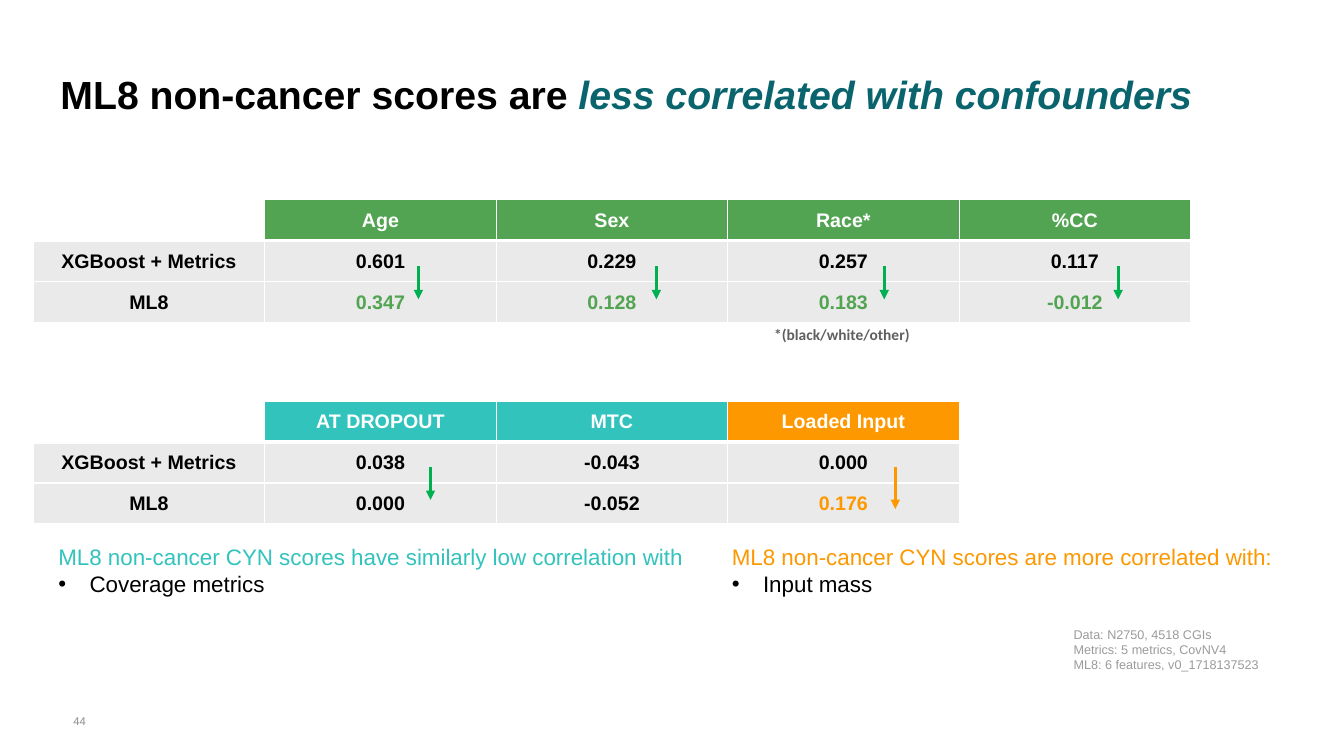
from dataclasses import dataclass

from pptx import Presentation
from pptx import util as u
from pptx.dml.color import RGBColor
from pptx.enum import shapes, text
from pptx.oxml import parse_xml
from pptx.oxml.ns import nsdecls, qn
from pptx.util import Inches


@dataclass(frozen=True)
class Theme:
    white: str = "FEFFFE"
    black: str = "000000"
    deep_teal: str = "09646D"
    teal: str = "32C3BD"
    green: str = "52A452"
    orange: str = "FD9800"
    arrow_green: str = "00B050"
    cell_gray: str = "EAEAEA"
    footnote_gray: str = "5F5F5F"
    source_gray: str = "9B9B9B"
    number_gray: str = "8C8C8C"
    font: str = "Arial"
    footnote_font: str = "Calibri"
    title_size: int = 28
    body_size: int = 16
    table_size: int = 14
    footnote_size: int = 11
    source_size: int = 9
    number_size: int = 8


THEME = Theme()
COLUMN_WIDTH = 2.296
ROW_HEIGHT = 0.406


def add_span(para, words, size, color, bold=False, italic=False, font=THEME.font):
    span = para.add_run()
    span.text = words
    span.font.name = font
    span.font.size = u.Pt(size)
    span.font.bold = bold
    span.font.italic = italic
    span.font.color.rgb = RGBColor.from_string(color)


def add_title(page):
    title = page.shapes.title
    title.left, title.top = Inches(0.5), Inches(0.53)
    title.width, title.height = Inches(12.32), Inches(0.86)
    title.text_frame.vertical_anchor = text.MSO_ANCHOR.MIDDLE
    para = title.text_frame.paragraphs[0]
    para.alignment = text.PP_ALIGN.LEFT
    para.line_spacing = 0.9
    add_span(para, "ML8 non-cancer scores are ", THEME.title_size, THEME.black, bold=True)
    add_span(para, "less correlated with confounders", THEME.title_size,
             THEME.deep_teal, bold=True, italic=True)


def add_box(page, left, top, width, height, wrap=True):
    box = page.shapes.add_textbox(Inches(left), Inches(top), Inches(width), Inches(height))
    box.text_frame.word_wrap = wrap
    return box.text_frame


def add_lines(page, place, lines, size, color, **style):
    """Add an unwrapped box with one paragraph per line."""
    frame = add_box(page, *place, wrap=False)
    for index, line in enumerate(lines):
        para = frame.add_paragraph() if index else frame.paragraphs[0]
        add_span(para, line, size, color, **style)
    return frame


def add_finding(page, left, width, heading, color, point):
    """Add a coloured heading with one bulleted point below it."""
    frame = add_box(page, left, 5.34, width, 0.64)
    add_span(frame.paragraphs[0], heading, THEME.body_size, color)
    para = frame.add_paragraph()
    props = para._p.get_or_add_pPr()
    props.set("marL", str(Inches(0.31)))
    props.set("indent", str(-Inches(0.31)))
    props.append(parse_xml(f'<a:buFont {nsdecls("a")} typeface="{THEME.font}"/>'))
    props.append(parse_xml(f'<a:buChar {nsdecls("a")} char="•"/>'))
    add_span(para, point, THEME.body_size, THEME.black)


def set_borders(cell, top, bottom):
    """Draw white borders; top and bottom are widths in points."""
    props = cell._tc.get_or_add_tcPr()
    for side, width in (("L", 1), ("R", 1), ("T", top), ("B", bottom)):
        props.append(parse_xml(
            f'<a:ln{side} {nsdecls("a")} w="{u.Pt(width)}"><a:solidFill>'
            f'<a:srgbClr val="{THEME.white}"/></a:solidFill></a:ln{side}>'))


def format_cell(cell, words, color, fill, top, bottom):
    cell.margin_left = cell.margin_right = cell.margin_top = Inches(0.01)
    cell.margin_bottom = 0
    cell.vertical_anchor = text.MSO_ANCHOR.MIDDLE
    set_borders(cell, top, bottom)
    cell.fill.solid()
    cell.fill.fore_color.rgb = RGBColor.from_string(fill)
    if words:
        para = cell.text_frame.paragraphs[0]
        para.alignment = text.PP_ALIGN.CENTER
        add_span(para, words, THEME.table_size, color, bold=True)


def add_score_table(page, top, columns):
    """Each column is (heading, heading fill, baseline score, ML8 score, ML8 colour)."""
    columns = [("", THEME.white, "XGBoost + Metrics", "ML8", THEME.black), *columns]
    frame = page.shapes.add_table(3, len(columns), Inches(0.33), Inches(top),
                                  Inches(COLUMN_WIDTH * len(columns)), Inches(ROW_HEIGHT * 3))
    table = frame.table
    table.horz_banding = False
    for row in table.rows:
        row.height = Inches(ROW_HEIGHT)
    for index, (heading, fill, baseline, score, color) in enumerate(columns):
        table.columns[index].width = Inches(COLUMN_WIDTH)
        format_cell(table.cell(0, index), heading, THEME.white, fill, 1, 3)
        format_cell(table.cell(1, index), baseline, THEME.black, THEME.cell_gray, 3, 1)
        format_cell(table.cell(2, index), score, color, THEME.cell_gray, 1, 1)


def add_down_arrow(page, x, top, length, color):
    arrow = page.shapes.add_connector(shapes.MSO_CONNECTOR.STRAIGHT, Inches(x), Inches(top),
                                      Inches(x), Inches(top + length))
    arrow.line.width = u.Pt(2.25)
    arrow.line.color.rgb = RGBColor.from_string(color)
    arrow.line._get_or_add_ln().append(
        parse_xml(f'<a:tailEnd {nsdecls("a")} type="triangle"/>'))
    arrow._element.find(qn("p:spPr")).append(parse_xml(f'<a:effectLst {nsdecls("a")}/>'))


def main():
    deck = Presentation()
    deck.slide_width, deck.slide_height = Inches(13.33), Inches(7.5)
    page = deck.slides.add_slide(deck.slide_layouts[5])
    page.background.fill.solid()
    page.background.fill.fore_color.rgb = RGBColor.from_string(THEME.white)
    add_title(page)

    add_score_table(page, 1.98, [
        ("Age", THEME.green, "0.601", "0.347", THEME.green),
        ("Sex", THEME.green, "0.229", "0.128", THEME.green),
        ("Race*", THEME.green, "0.257", "0.183", THEME.green),
        ("%CC", THEME.green, "0.117", "-0.012", THEME.green),
    ])
    add_score_table(page, 3.98, [
        ("AT DROPOUT", THEME.teal, "0.038", "0.000", THEME.black),
        ("MTC", THEME.teal, "-0.043", "-0.052", THEME.black),
        ("Loaded Input", THEME.orange, "0.000", "0.176", THEME.orange),
    ])

    for x in (4.15, 6.51, 8.77, 11.09):
        add_down_arrow(page, x, 2.64, 0.33, THEME.arrow_green)
    add_down_arrow(page, 4.27, 4.63, 0.33, THEME.arrow_green)
    add_down_arrow(page, 8.88, 4.63, 0.42, THEME.orange)

    add_finding(page, 0.48, 6.41,
                "ML8 non-cancer CYN scores have similarly low correlation with",
                THEME.teal, "Coverage metrics")
    add_finding(page, 7.16, 5.58, "ML8 non-cancer CYN scores are more correlated with:",
                THEME.orange, "Input mass")

    add_lines(page, (7.58, 3.18, 1.56, 0.29), ["*(black/white/other)"], THEME.footnote_size,
              THEME.footnote_gray, bold=True, font=THEME.footnote_font)
    add_lines(page, (10.55, 6.17, 2.05, 0.56),
              ["Data: N2750, 4518 CGIs", "Metrics: 5 metrics, CovNV4",
               "ML8: 6 features, v0_1718137523"], THEME.source_size, THEME.source_gray)
    number = add_lines(page, (0.52, 6.95, 0.54, 0.4), ["44"], THEME.number_size,
                       THEME.number_gray)
    number.word_wrap = True
    number.vertical_anchor = text.MSO_ANCHOR.MIDDLE
    number.paragraphs[0].alignment = text.PP_ALIGN.CENTER

    deck.save("out.pptx")


if __name__ == "__main__":
    main()
